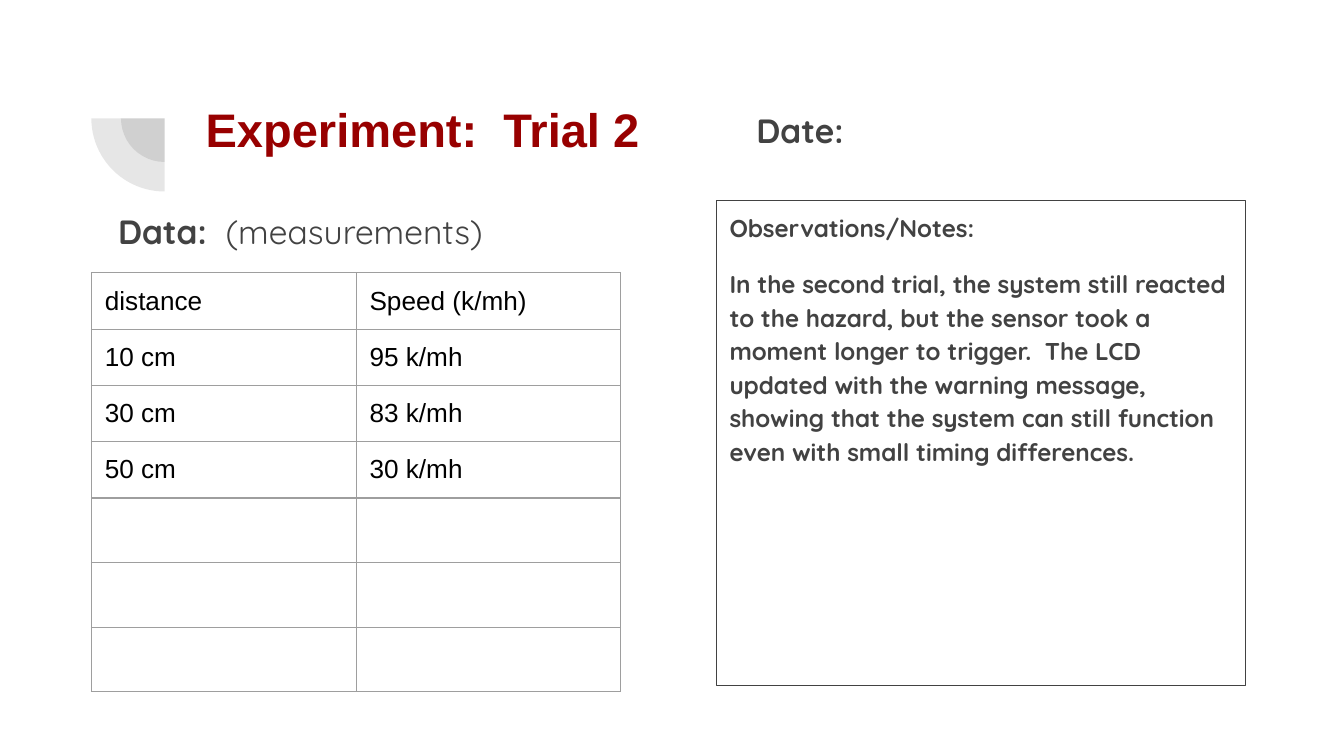
from lxml.etree import SubElement as Sub
from pptx import Presentation
from pptx.dml.color import RGBColor as RGB
from pptx.enum.shapes import MSO_SHAPE as Kind
from pptx.enum.text import MSO_ANCHOR as Anchor, MSO_AUTO_SIZE as Fit, PP_ALIGN as Align
from pptx.oxml.ns import qn
from pptx.util import Inches as In, Pt

HUES = {"ink": "424242", "title": "980000", "rule": "9E9E9E", "cell": "000000"}
BODY = "Quicksand"
HEAD = "Arial"
LEFT = 0.68  # left edge of the mark and the table
PAD = 0.1
ROWS = [
    ("distance", "Speed (k/mh)"),
    ("10 cm", "95 k/mh"),
    ("30 cm", "83 k/mh"),
    ("50 cm", "30 k/mh"),
    ("", ""),
    ("", ""),
    ("", ""),
]
NOTES = (
    "In the second trial, the system still reacted to the hazard, but the "
    "sensor took a moment longer to trigger.  The LCD updated with the warning "
    "message, showing that the system can still function even with small "
    "timing differences."
)


def hue(name):
    return RGB.from_string(HUES[name])


def add_run(para, text, size, face=BODY, color="ink", bold=True):
    run = para.add_run()
    run.text = text
    font = run.font
    font.size, font.name, font.bold = Pt(size), face, bold
    font.color.rgb = hue(color)


def set_frame(frame):
    frame.word_wrap = True
    frame.auto_size = Fit.NONE
    frame.vertical_anchor = Anchor.TOP
    frame.margin_left = frame.margin_right = In(PAD)
    frame.margin_top = frame.margin_bottom = In(PAD)
    para = frame.paragraphs[0]
    para.alignment = Align.LEFT
    return para


def add_mark(slide, mid_x, mid_y):
    """Two quarter discs around one centre."""
    group = slide.shapes.add_group_shape()
    for size in (0.65, 1.09):
        pie = group.shapes.add_shape(
            Kind.PIE, In(mid_x - size / 2), In(mid_y - size / 2), In(size), In(size))
        pie.adjustments[0], pie.adjustments[1] = 108, 162
        pie.rotation = 270
        pie.shadow.inherit = False
        pie.line.fill.background()
        pie.fill.solid()
        pie.fill.fore_color.rgb = hue("ink")
        tint = pie.fill._xPr.find(".//" + qn("a:srgbClr"))
        Sub(tint, qn("a:alpha"), val="13000")


def add_title(slide, text):
    title = slide.shapes.title
    title.left, title.top, title.width, title.height = In(1.43), In(0.65), In(7.69), In(1.09)
    add_run(set_frame(title.text_frame), text, 25.2, HEAD, "title")


def add_label(slide, left, top, *parts):
    box = slide.shapes.add_textbox(In(left), In(top), In(4.22), In(0.45))
    para = set_frame(box.text_frame)
    for text, bold in parts:
        add_run(para, text, 18, bold=bold)


def add_notes(slide):
    box = slide.shapes.add_shape(Kind.RECTANGLE, In(5.33), In(1.49), In(3.94), In(3.61))
    box.shadow.inherit = False
    box.fill.background()
    box.line.color.rgb = hue("ink")
    box.line.width = Pt(0.75)
    add_run(set_frame(box.text_frame), "Observations/Notes:", 13)
    para = box.text_frame.add_paragraph()
    para.alignment = Align.LEFT
    para.space_before = Pt(12)
    para.line_spacing = 1.15
    add_run(para, NOTES, 13)


def set_edges(cell):
    props = cell._tc.get_or_add_tcPr()
    for at, side in enumerate(("lnL", "lnR", "lnT", "lnB")):
        line = props.makeelement(qn("a:" + side), {"w": str(Pt(0.75))})
        props.insert(at, line)
        Sub(Sub(line, qn("a:solidFill")), qn("a:srgbClr"), val=HUES["rule"])


def fill_cell(cell, text):
    cell.fill.background()
    set_edges(cell)
    cell.margin_left = cell.margin_right = In(PAD)
    cell.margin_top = cell.margin_bottom = In(PAD)
    para = cell.text_frame.paragraphs[0]
    if text:
        add_run(para, text, 14, HEAD, "cell", False)
    else:  # the size of an empty line makes the row grow
        end = Sub(para._p, qn("a:endParaRPr"), sz="1800")
        Sub(end, qn("a:latin"), typeface=HEAD)


def add_data(slide):
    high = Pt(30)
    grid = slide.shapes.add_table(
        len(ROWS), 2, In(LEFT), In(2.03), In(3.94), high * len(ROWS)).table
    grid.first_row = grid.horz_banding = False
    for col in grid.columns:
        col.width = In(1.97)
    for row, words in zip(grid.rows, ROWS):
        row.height = high
        for cell, text in zip(row.cells, words):
            fill_cell(cell, text)


def main():
    deck = Presentation()
    deck.slide_width = In(10)
    deck.slide_height = deck.slide_width * 9 // 16
    slide = deck.slides.add_slide(deck.slide_layouts[5])

    # Heading row
    add_mark(slide, LEFT + 1.09 / 2, 0.88)
    add_title(slide, "Experiment:  Trial 2")
    add_label(slide, 5.53, 0.72, ("Date:", True))

    # Notes on the right, data on the left
    add_notes(slide)
    add_label(slide, 0.78, 1.47, ("Data:  ", True), ("(measurements)", False))
    add_data(slide)
    deck.save("out.pptx")


if __name__ == "__main__":
    main()
